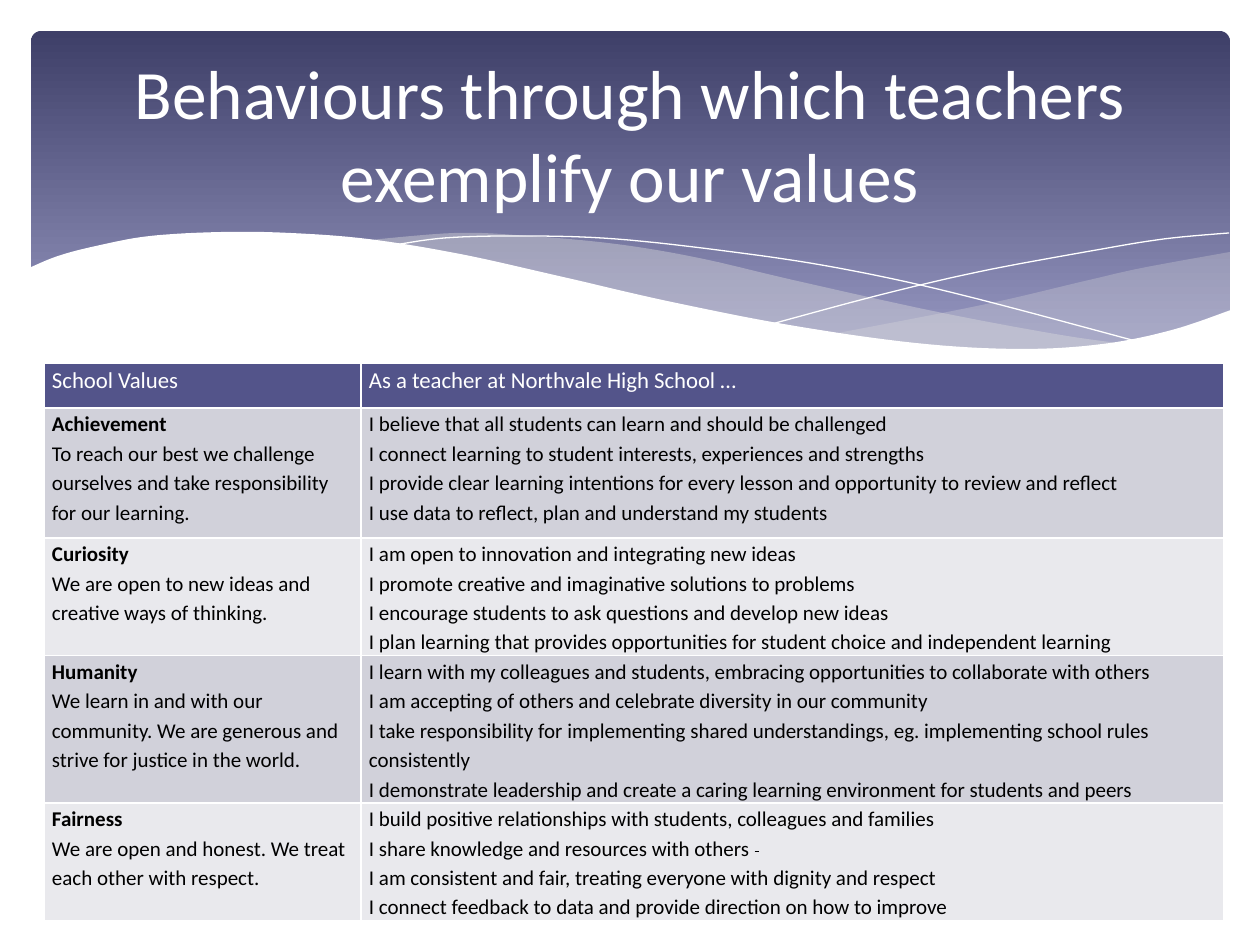
from lxml import etree
from pptx import Presentation
from pptx import util as u
from pptx.dml import color
from pptx.enum import shapes, text
from pptx.oxml import ns

FONT = "Calibri"
WAVES = [
    ([[(1230, 252), (1142, 268), (1085, 281), (982, 305), (833, 334)],
      [(833, 334), (922, 345), (1012, 350), (1099, 346), (1160, 334), (1230, 311)]],
     "DEDEDE", 29),
    ([[(1125, 344), (1055, 334), (933, 311), (793, 280), (699, 258), (616, 244),
       (529, 236), (455, 233), (360, 241)],
      [(360, 241), (456, 256), (566, 280), (713, 312), (819, 333), (927, 347),
       (1030, 350), (1125, 344)]],
     "DEDEDE", 40),
]
LINES = [
    [(389, 246), (445, 238), (524, 236), (616, 239), (733, 252), (838, 268),
     (958, 294), (1143, 343)],
    [(772, 324), (876, 296), (978, 272), (1091, 251), (1164, 239), (1229, 233)],
]
COVER = [
    [(1231, 310), (1172, 330), (1103, 344), (1019, 349), (915, 343), (789, 325),
     (667, 301), (563, 277), (460, 254), (368, 239), (290, 233), (223, 232),
     (150, 236), (96, 246), (58, 256), (29, 268)],
    [(29, 268), (29, 415)],
    [(29, 415), (1231, 415)],
]
HEADS = ["School Values", "As a teacher at Northvale High School …"]
VALUES = [
    ("Achievement",
     "To reach our best we challenge ourselves and take responsibility for our learning.",
     ["I believe that all students can learn and should be challenged",
      "I connect learning to student interests, experiences and strengths",
      "I provide clear learning intentions for every lesson and opportunity to review and reflect",
      "I use data to reflect, plan and understand my students"]),
    ("Curiosity",
     "We are open to new ideas and creative ways of thinking.",
     ["I am open to innovation and integrating new ideas",
      "I promote creative and imaginative solutions to problems",
      "I encourage students to ask questions and develop new ideas",
      "I plan learning that provides opportunities for student choice and independent learning"]),
    ("Humanity",
     "We learn in and with our community. We are generous and strive for justice in the world.",
     ["I learn with my colleagues and students, embracing opportunities to collaborate with others",
      "I am accepting of others and celebrate diversity in our community",
      "I take responsibility for implementing shared understandings, eg. implementing school rules consistently",
      "I demonstrate leadership and create a caring learning environment for students and peers"]),
    ("Fairness",
     "We are open and honest. We treat each other with respect.",
     ["I build positive relationships with students, colleagues and families",
      "I share knowledge and resources with others ",
      "I am consistent and fair, treating everyone with dignity and respect",
      "I connect feedback to data and provide direction on how to improve"]),
]


def px(n):
    return u.Emu(round(n * 914400 / 126))


def rgb(code):
    return color.RGBColor.from_string(code)


def put(obj, **vals):
    for key, val in vals.items():
        setattr(obj, key, val)


def style(run, size, code, bold=False):
    put(run.font, name=FONT, size=u.Pt(size), bold=bold)
    run.font.color.rgb = rgb(code)


def paint(fill, code, alpha=100):
    fill.solid()
    fill.fore_color.rgb = rgb(code)
    if alpha < 100:
        node = fill._xPr.find(".//" + ns.qn("a:srgbClr"))
        etree.SubElement(node, ns.qn("a:alpha"), val=str(alpha * 1000))


def smooth(pts, steps=8):
    ends = [pts[0], *pts, pts[-1]]
    out = [pts[0]]
    for a, b, c, d in zip(ends, ends[1:], ends[2:], ends[3:]):
        for i in range(1, steps + 1):
            t = i / steps
            out.append(tuple(
                (2 * q + (r - p) * t + (2 * p - 5 * q + 4 * r - s) * t ** 2
                 + (3 * q - p - 3 * r + s) * t ** 3) / 2
                for p, q, r, s in zip(a, b, c, d)))
    return out


def trace(slide, curves, close=True):
    pts = [(px(x), px(y)) for part in curves for x, y in smooth(part)]
    form = slide.shapes.build_freeform(*pts[0])
    form.add_line_segments(pts[1:], close=close)
    shape = form.convert_to_shape()
    shape.shadow.inherit = False
    return shape


def add_wave(slide, curves, code, alpha=100):
    shape = trace(slide, curves)
    paint(shape.fill, code, alpha)
    shape.line.fill.background()


def add_line(slide, curve):
    shape = trace(slide, [curve], close=False)
    shape.fill.background()
    paint(shape.line.fill, "FFFFFF")
    shape.line.width = u.Pt(0)


def add_band(slide):
    band = slide.shapes.add_shape(
        shapes.MSO_SHAPE.ROUNDED_RECTANGLE, px(31), px(31), px(1199), px(340))
    band.adjustments[0] = 0.03
    band.shadow.inherit = False
    band.line.fill.background()
    band.fill.gradient()
    band.fill.gradient_angle = 270
    for stop, (pos, code) in zip(band.fill.gradient_stops, [(0, "3E3F68"), (0.9, "9394BE")]):
        stop.position = pos
        stop.color.rgb = rgb(code)


def add_title(slide, words):
    title = slide.shapes.title
    put(title, left=px(63), top=px(47), width=px(1134), height=px(173))
    frame = title.text_frame
    put(frame, word_wrap=True, auto_size=text.MSO_AUTO_SIZE.NONE,
        vertical_anchor=text.MSO_ANCHOR.MIDDLE)
    para = frame.paragraphs[0]
    para.alignment = text.PP_ALIGN.CENTER
    run = para.add_run()
    run.text = words
    style(run, 39.6, "FFFFFF")
    slide.shapes._spTree.append(title._element)


def fill_cell(cell, lines, back, size=12, code="000000", lead=False):
    put(cell, margin_left=px(8), margin_right=px(8), margin_top=0, margin_bottom=0)
    paint(cell.fill, back)
    frame = cell.text_frame
    for i, line in enumerate(lines):
        para = frame.add_paragraph() if i else frame.paragraphs[0]
        para.line_spacing = 1.15
        run = para.add_run()
        run.text = line
        style(run, size, code, lead and i == 0)
        if line.endswith(" "):
            gap = para.add_run()
            gap.text = " "
            style(gap, size, code)
            gap._r.get_or_add_rPr().set("strike", "sngStrike")


def add_grid(slide):
    cols, rows = [317, 863], [45, 130, 111, 130, 111]
    grid = slide.shapes.add_table(
        len(rows), len(cols), px(44), px(363), px(sum(cols)), px(sum(rows))).table
    for col, wide in zip(grid.columns, cols):
        col.width = px(wide)
    for row, high in zip(grid.rows, rows):
        row.height = px(high)
    for i, head in enumerate(HEADS):
        fill_cell(grid.cell(0, i), [head], "53548A", 13, "FFFFFF")
    for i, (name, motto, acts) in enumerate(VALUES, 1):
        back = "D1D1DA" if i % 2 else "E9E9ED"
        fill_cell(grid.cell(i, 0), [name, motto], back, lead=True)
        fill_cell(grid.cell(i, 1), acts, back)


def main():
    deck = Presentation()
    put(deck, slide_width=px(1260), slide_height=px(945))
    slide = deck.slides.add_slide(deck.slide_layouts[5])
    add_band(slide)
    for wave in WAVES:
        add_wave(slide, *wave)
    for line in LINES:
        add_line(slide, line)
    add_wave(slide, COVER, "FFFFFF")
    add_grid(slide)
    add_title(slide, "Behaviours through which teachers exemplify our values")
    deck.save("out.pptx")


if __name__ == "__main__":
    main()
